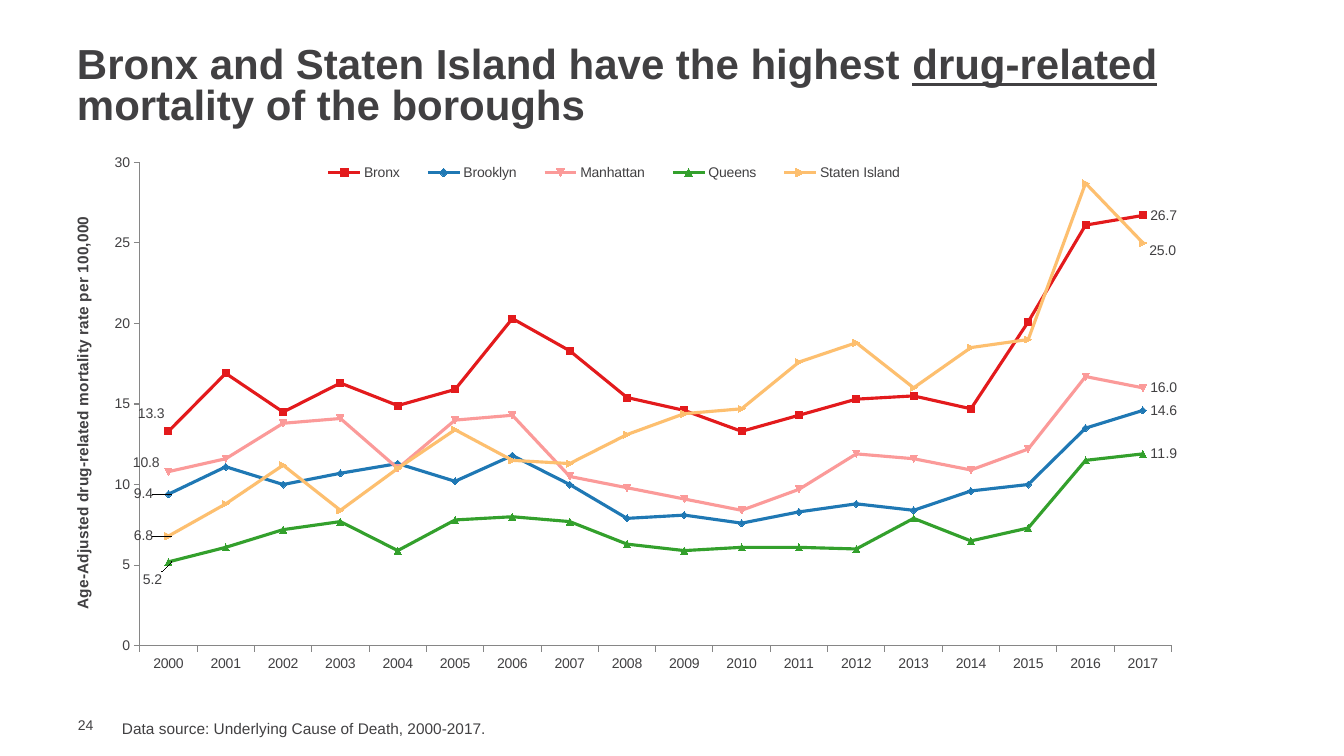
from dataclasses import dataclass

from lxml import etree
from pptx import Presentation
from pptx import util as u
from pptx.chart import data as chart_data
from pptx.dml import color
from pptx.enum import chart as charts, text
from pptx.oxml import ns, parse_xml

EMU_PER_PX = 914400 / 100.8


@dataclass(frozen=True)
class Theme:
    font: str = "Arial"
    ink: str = "414042"
    axis: str = "868686"
    title_size: int = 30
    note_size: int = 11
    small_size: int = 10
    series_width: float = 2.25


THEME = Theme()
YEARS = [str(year) for year in range(2000, 2018)]

# Borough: colour, yearly rates, shift in px of the first and last labels
BOROUGHS = {
    "Bronx": ("E31A1C", [13.3, 16.9, 14.5, 16.3, 14.9, 15.9, 20.3, 18.3, 15.4,
                         14.6, 13.3, 14.3, 15.3, 15.5, 14.7, 20.1, 26.1, 26.7],
              (-38, -18), None),
    "Brooklyn": ("1F78B4", [9.4, 11.1, 10, 10.7, 11.3, 10.2, 11.8, 10, 7.9,
                            8.1, 7.6, 8.3, 8.8, 8.4, 9.6, 10, 13.5, 14.6],
                 (-42, 0), None),
    "Manhattan": ("FB9A99", [10.8, 11.6, 13.8, 14.1, 11, 14, 14.3, 10.5, 9.8,
                             9.1, 8.4, 9.7, 11.9, 11.6, 10.9, 12.2, 16.7, 16],
                  (-43, -9), None),
    "Queens": ("33A02C", [5.2, 6.1, 7.2, 7.7, 5.9, 7.8, 8, 7.7, 6.3,
                          5.9, 6.1, 6.1, 6, 7.9, 6.5, 7.3, 11.5, 11.9],
               (-33, 18), None),
    "Staten Island": ("FDBF6F", [6.8, 8.8, 11.2, 8.4, 11, 13.4, 11.5, 11.3, 13.1,
                                 14.4, 14.7, 17.6, 18.8, 16, 18.5, 19, 28.7, 25],
                      (-42, 0), (-1, 8)),
}


def px(length):
    return u.Emu(round(length * EMU_PER_PX))


def rgb(value):
    return color.RGBColor.from_string(value)


def style_font(font, size, bold=False):
    font.name = THEME.font
    font.size = u.Pt(size)
    font.bold = bold
    font.color.rgb = rgb(THEME.ink)


def add_text(slide, box, runs, size, bold=False, spacing=None,
             anchor=text.MSO_ANCHOR.TOP, insets=(10, 5, 10, 5)):
    """Place one paragraph; runs are (wording, underlined) pairs."""
    frame = slide.shapes.add_textbox(*map(px, box)).text_frame
    frame.word_wrap = True
    frame.vertical_anchor = anchor
    (frame.margin_left, frame.margin_top,
     frame.margin_right, frame.margin_bottom) = map(px, insets)
    paragraph = frame.paragraphs[0]
    if spacing:
        paragraph.line_spacing = spacing
    for wording, underlined in runs:
        run = paragraph.add_run()
        run.text = wording
        style_font(run.font, size, bold)
        run.font.underline = underlined


def make_layout(**settings):
    layout = parse_xml(f"<c:layout {ns.nsdecls('c')}><c:manualLayout/></c:layout>")
    for name, value in settings.items():
        etree.SubElement(layout[0], ns.qn(f"c:{name}")).set("val", str(value))
    return layout


def replace_layout(parent, layout, index):
    for old in parent.findall(ns.qn("c:layout")):
        parent.remove(old)
    parent.insert(index, layout)


def style_axis(axis):
    axis.has_major_gridlines = False
    axis.major_tick_mark = charts.XL_TICK_MARK.OUTSIDE
    axis.minor_tick_mark = charts.XL_TICK_MARK.NONE
    axis.format.line.color.rgb = rgb(THEME.axis)
    axis.format.line.width = u.Pt(0.75)
    style_font(axis.tick_labels.font, THEME.small_size)


def label_point(series, index, shift, size):
    label = series.points[index].data_label
    label.position = charts.XL_LABEL_POSITION.RIGHT
    if shift:
        item = series.data_labels._element.find(
            f"{ns.qn('c:dLbl')}[{ns.qn('c:idx')}][last()]")
        replace_layout(item, make_layout(x=round(shift[0] / size[0], 4),
                                         y=round(shift[1] / size[1], 4)), 1)


def style_series(series, size):
    shade, _, first_shift, last_shift = BOROUGHS[series.name]
    series.smooth = False
    series.format.line.color.rgb = rgb(shade)
    series.format.line.width = u.Pt(THEME.series_width)
    series.marker.size = 5
    series.marker.format.fill.solid()
    series.marker.format.fill.fore_color.rgb = rgb(shade)
    series.marker.format.line.color.rgb = rgb(shade)
    # End labels, with leader lines to those moved away
    series.data_labels.show_value = False
    label_point(series, 0, first_shift, size)
    label_point(series, len(YEARS) - 1, last_shift, size)
    series.data_labels._element.append(parse_xml(
        f'<c:extLst {ns.nsdecls("c")}>'
        '<c:ext uri="{CE6537A1-D6FC-4f65-9D91-7224C49458BB}" '
        'xmlns:c15="http://schemas.microsoft.com/office/drawing/2012/chart">'
        '<c15:showLeaderLines val="1"/></c:ext></c:extLst>'))


def add_mortality_chart(slide, box):
    data = chart_data.CategoryChartData(number_format="0.0")
    data.categories = YEARS
    for borough, (_, rates, *_) in BOROUGHS.items():
        data.add_series(borough, rates)
    chart = slide.shapes.add_chart(
        charts.XL_CHART_TYPE.LINE_MARKERS, *map(px, box), data).chart
    chart.has_title = False
    style_font(chart.font, THEME.small_size)
    plot = chart.plots[0]
    plot.vary_by_categories = False
    replace_layout(chart._chartSpace.chart.plotArea, make_layout(
        layoutTarget="inner", xMode="edge", yMode="edge",
        x=0.063, y=0.021, w=0.918, h=0.897), 0)

    # Axes
    style_axis(chart.category_axis)
    rate_axis = chart.value_axis
    style_axis(rate_axis)
    rate_axis.minimum_scale, rate_axis.maximum_scale = 0, 30
    rate_axis.major_unit = 5
    rate_axis.tick_labels.number_format = "0"
    rate_axis.tick_labels.number_format_is_linked = False
    run = rate_axis.axis_title.text_frame.paragraphs[0].add_run()
    run.text = "Age-Adjusted drug-related mortality rate per 100,000"
    style_font(run.font, THEME.note_size, bold=True)

    # Legend inside the top of the plot
    chart.has_legend = True
    legend = chart.legend
    legend.position = charts.XL_LEGEND_POSITION.TOP
    legend.include_in_layout = False
    style_font(legend.font, THEME.small_size)
    replace_layout(legend._element, make_layout(
        xMode="edge", yMode="edge", x=0.21, y=0.02, w=0.55, h=0.04), 1)

    for series in plot.series:
        style_series(series, box[2:])


def build_chart_slide(presentation):
    slide = presentation.slides.add_slide(presentation.slide_layouts[6])
    # Page number
    add_text(slide, (68, 716, 43, 17), [("24", False)], THEME.small_size,
             anchor=text.MSO_ANCHOR.MIDDLE, insets=(10, 0, 0, 0))
    # Title
    add_text(slide, (67, 42, 1210, 92),
             [("Bronx and Staten Island have the highest ", False),
              ("drug-related ", True),
              ("mortality of the boroughs", False)],
             THEME.title_size, bold=True, spacing=0.8,
             anchor=text.MSO_ANCHOR.MIDDLE)
    # Chart and its source
    add_mortality_chart(slide, (69, 151, 1124, 539))
    add_text(slide, (112, 714, 979, 29),
             [("Data source: Underlying Cause of Death, 2000-2017.", False)],
             THEME.note_size)


def main():
    presentation = Presentation()
    presentation.slide_width, presentation.slide_height = px(1344), px(756)
    build_chart_slide(presentation)
    presentation.save("out.pptx")


if __name__ == "__main__":
    main()
